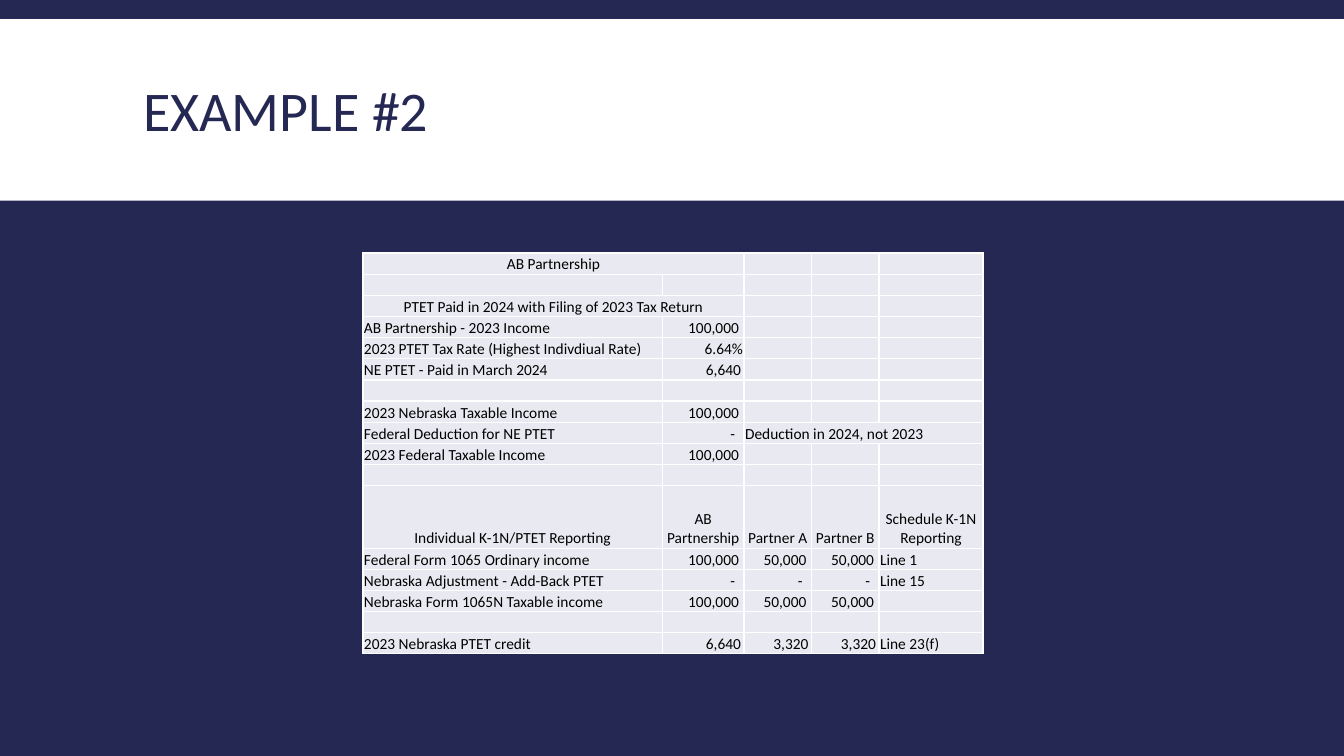
import pptx
import pptx.dml.color
import pptx.enum.shapes
import pptx.enum.text
import pptx.oxml
import pptx.oxml.ns
import pptx.util
from pptx.util import Inches

ALIGN = pptx.enum.text.PP_ALIGN
ANCHOR = pptx.enum.text.MSO_ANCHOR

COLUMN_WIDTHS = [2.97, 0.81, 0.67, 0.67, 1.03]
ROW_HEIGHT = 0.21
HEADER_ROW = 11
HEADER_HEIGHT = 0.62
ROWS = [
    ["AB Partnership"],
    [],
    ["PTET Paid in 2024 with Filing of 2023 Tax Return"],
    ["AB Partnership - 2023 Income", "100,000"],
    ["2023 PTET Tax Rate (Highest Indivdiual Rate)", "6.64%"],
    ["NE PTET - Paid in March 2024", "6,640"],
    [],
    ["2023 Nebraska Taxable Income", "100,000"],
    ["Federal Deduction for NE PTET", "-", "Deduction in 2024, not 2023"],
    ["2023 Federal Taxable Income", "100,000"],
    [],
    ["Individual K-1N/PTET Reporting", "AB Partnership", "Partner A", "Partner B",
     "Schedule K-1N Reporting"],
    ["Federal Form 1065 Ordinary income", "100,000", "50,000", "50,000", "Line 1"],
    ["Nebraska Adjustment - Add-Back PTET", "-", "-", "-", "Line 15"],
    ["Nebraska Form 1065N Taxable income", "100,000", "50,000", "50,000"],
    [],
    ["2023 Nebraska PTET credit", "6,640", "3,320", "3,320", "Line 23(f)"],
]
# (row, first column, last column)
MERGES = [(0, 0, 1), (2, 0, 1), (8, 2, 4)]
CENTERED_ROWS = {0, 2, HEADER_ROW}


def color(value):
    return pptx.dml.color.RGBColor.from_string(value)


def number_margin(text):
    """Return the right margin in inches of a figure, or None for wording."""
    if text == "-":
        return 0.09
    if text.endswith("%"):
        return 0.01
    if text.replace(",", "").isdigit():
        return 0.03 if len(text) == 5 else 0.05
    return None


class SlideBuilder:
    font = "Calibri"
    navy = "242852"
    white = "FFFFFF"
    black = "000000"
    cell_fill = "E9EAF1"
    table_size = 11

    def __init__(self, presentation):
        self.slide = presentation.slides.add_slide(presentation.slide_layouts[5])
        background = self.slide.background.fill
        background.solid()
        background.fore_color.rgb = color(self.navy)

    def run(self, paragraph, text, size, text_color):
        run = paragraph.add_run()
        run.text = text
        run.font.name = self.font
        run.font.size = pptx.util.Pt(size)
        run.font.color.rgb = color(text_color)

    def band(self, left, top, width, height):
        """Add a plain white band behind the title."""
        band = self.slide.shapes.add_shape(
            pptx.enum.shapes.MSO_SHAPE.RECTANGLE,
            Inches(left), Inches(top), Inches(width), Inches(height))
        band.shadow.inherit = False
        band.fill.solid()
        band.fill.fore_color.rgb = color(self.white)
        band.line.fill.background()
        self.slide.shapes.title.element.addprevious(band.element)

    def title(self, text, left, top, width, height):
        title = self.slide.shapes.title
        title.left, title.top = Inches(left), Inches(top)
        title.width, title.height = Inches(width), Inches(height)
        frame = title.text_frame
        frame.word_wrap = True
        frame.auto_size = pptx.enum.text.MSO_AUTO_SIZE.NONE
        frame.vertical_anchor = ANCHOR.MIDDLE
        paragraph = frame.paragraphs[0]
        paragraph.alignment = ALIGN.LEFT
        paragraph.line_spacing = 0.85
        self.run(paragraph, text, 40, self.navy)

    def borders(self, cell):
        properties = cell._tc.get_or_add_tcPr()
        for position, side in enumerate(("lnL", "lnR", "lnT", "lnB")):
            properties.insert(position, pptx.oxml.parse_xml(
                f'<a:{side} {pptx.oxml.ns.nsdecls("a")} w="12700"><a:solidFill>'
                f'<a:srgbClr val="{self.white}"/></a:solidFill></a:{side}>'))

    def cell(self, cell, text, centered):
        cell.fill.solid()
        cell.fill.fore_color.rgb = color(self.cell_fill)
        self.borders(cell)
        cell.vertical_anchor = ANCHOR.BOTTOM
        cell.margin_left = cell.margin_right = cell.margin_top = Inches(0.01)
        cell.margin_bottom = 0
        paragraph = cell.text_frame.paragraphs[0]
        if not text:
            # The end mark's size keeps an empty row from growing.
            end_mark = paragraph._p.get_or_add_endParaRPr()
            end_mark.set("sz", str(self.table_size * 100))
            return
        margin = number_margin(text)
        if margin is not None:
            paragraph.alignment = ALIGN.RIGHT
            cell.margin_right = Inches(margin)
        else:
            paragraph.alignment = ALIGN.CENTER if centered else ALIGN.LEFT
        self.run(paragraph, text, self.table_size, self.black)

    def table(self, left, top):
        heights = [ROW_HEIGHT] * len(ROWS)
        heights[HEADER_ROW] = HEADER_HEIGHT
        table = self.slide.shapes.add_table(
            len(ROWS), len(COLUMN_WIDTHS), Inches(left), Inches(top),
            Inches(sum(COLUMN_WIDTHS)), Inches(sum(heights))).table
        table.first_row = table.horz_banding = False
        for column, width in zip(table.columns, COLUMN_WIDTHS):
            column.width = Inches(width)
        for row, height in zip(table.rows, heights):
            row.height = Inches(height)
        for row_index, values in enumerate(ROWS):
            for column_index in range(len(COLUMN_WIDTHS)):
                text = values[column_index] if column_index < len(values) else ""
                self.cell(table.cell(row_index, column_index), text,
                          row_index in CENTERED_ROWS)
        for row_index, first, last in MERGES:
            table.cell(row_index, first).merge(table.cell(row_index, last))


def main():
    presentation = pptx.Presentation()
    presentation.slide_width = Inches(13.33)
    presentation.slide_height = Inches(7.5)
    builder = SlideBuilder(presentation)
    builder.band(0, 0.19, 13.33, 1.8)
    builder.title("EXAMPLE #2", 1.32, 0.31, 10.7, 1.65)
    builder.table(3.6, 2.51)
    presentation.save("out.pptx")


if __name__ == "__main__":
    main()
